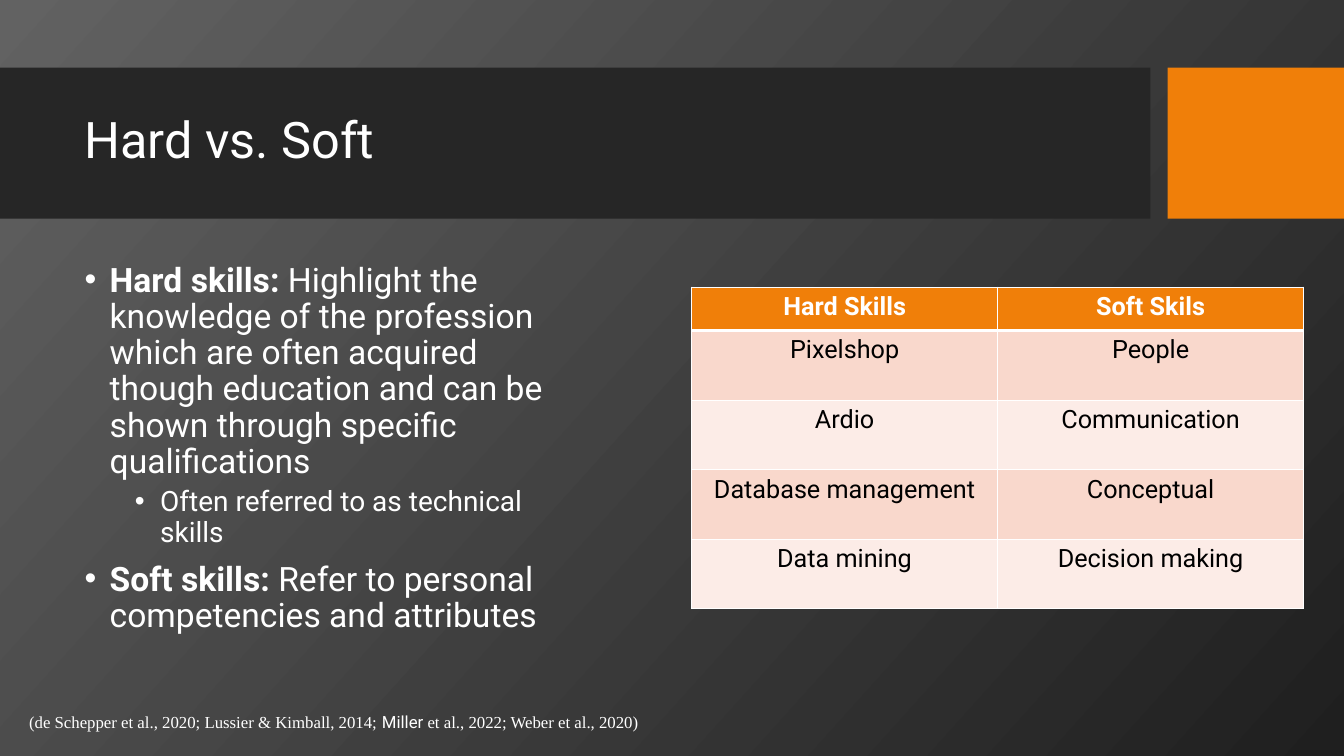
from lxml import etree
from pptx import Presentation
from pptx.dml.color import RGBColor
from pptx.enum import shapes, text
from pptx.oxml.ns import qn
from pptx.util import Inches, Pt

# Content
TITLE = "Hard vs. Soft"
POINTS = [  # level, bold lead, text
    (0, "Hard skills: ", "Highlight the knowledge of the profession which are often "
     "acquired though education and can be shown through specific qualifications"),
    (1, "", "Often referred to as technical skills"),
    (0, "Soft skills: ", "Refer to personal competencies and attributes"),
]
CITES = [
    ("(de Schepper et al., 2020; Lussier & Kimball, 2014; ", "Times New Roman"),
    ("Miller", "Roboto"),
    (" et al., 2022; Weber et al., 2020)", "Times New Roman"),
]
SKILLS = [
    ("Hard Skills", "Soft Skils"),
    ("Pixelshop", "People"),
    ("Ardio", "Communication"),
    ("Database management", "Conceptual"),
    ("Data mining", "Decision making"),
]

# Colours and level formats
WHITE = RGBColor(0xFF, 0xFF, 0xFF)
BLACK = RGBColor(0, 0, 0)
DARK = RGBColor(0x26, 0x26, 0x26)
ORANGE = RGBColor(0xF0, 0x7F, 0x09)
ROSE = RGBColor(0xF9, 0xD8, 0xCC)
PALE = RGBColor(0xFC, 0xEC, 0xE7)
SHADES = [RGBColor(0x62, 0x62, 0x62), RGBColor(0x1F, 0x1F, 0x1F)]
LEVELS = [dict(size=24, left=0.25, before=10), dict(size=20, left=0.75, before=5)]
HANG = 0.25


def add_run(par, words, size, **form):
    run = par.add_run()
    run.text = words
    base = dict(name="Roboto", size=Pt(size), bold=False)
    color = form.pop("color", WHITE)
    for key, val in {**base, **form}.items():
        setattr(run.font, key, val)
    run.font.color.rgb = color


def add_box(x, y, w, h, anchor=text.MSO_ANCHOR.TOP):
    frame = slide.shapes.add_textbox(*map(Inches, (x, y, w, h))).text_frame
    frame.word_wrap = True
    frame.vertical_anchor = anchor
    return frame


def add_bullet(par, left):
    props = par._p.get_or_add_pPr()
    props.set("marL", str(Inches(left)))
    props.set("indent", str(-Inches(HANG)))
    etree.SubElement(props, qn("a:buFont")).set("typeface", "Arial")
    etree.SubElement(props, qn("a:buChar")).set("char", "•")


def add_edges(cell, widths):
    props = cell._tc.get_or_add_tcPr()
    for spot, (side, width) in enumerate(widths.items()):
        line = etree.Element(qn("a:ln" + side), w=str(Pt(width)))
        fill = etree.SubElement(line, qn("a:solidFill"))
        etree.SubElement(fill, qn("a:srgbClr")).set("val", str(WHITE))
        props.insert(spot, line)


prs = Presentation()
prs.slide_width, prs.slide_height = Inches(13.33), Inches(7.5)
slide = prs.slides.add_slide(prs.slide_layouts[6])

# Background
back = slide.background.fill
back.gradient()
back.gradient_angle = 318
for stop, shade in zip(back.gradient_stops, SHADES):
    stop.color.rgb = shade

# Title band
for x, w, color in [(0, 11.41, DARK), (11.58, 1.75, ORANGE)]:
    band = slide.shapes.add_shape(
        shapes.MSO_SHAPE.RECTANGLE, *map(Inches, (x, 0.67, w, 1.5)))
    band.shadow.inherit = False
    band.fill.solid()
    band.fill.fore_color.rgb = color
    band.line.fill.background()
head = add_box(0.74, 0.82, 10.51, 1.18, text.MSO_ANCHOR.MIDDLE).paragraphs[0]
head.line_spacing = 0.9
add_run(head, TITLE, 36)

# Bullet points
body = add_box(0.74, 2.56, 5.13, 3.94)
for i, (level, lead, words) in enumerate(POINTS):
    form = LEVELS[level]
    par = body.add_paragraph() if i else body.paragraphs[0]
    add_bullet(par, form["left"])
    par.level = level
    par.line_spacing = 0.9
    par.space_before = Pt(form["before"] if i else 0)
    if lead:
        add_run(par, lead, form["size"], bold=True)
    add_run(par, words, form["size"])

# Citations
note = add_box(0.19, 7.01, 6.67, 0.3).paragraphs[0]
for words, name in CITES:
    add_run(note, words, 12, name=name)

# Skills table
grid = slide.shapes.add_table(
    len(SKILLS), 2, *map(Inches, (6.86, 2.85, 6.07, 3.2))).table
for r, row in enumerate(SKILLS):
    grid.rows[r].height = Inches(0.69 if r else 0.43)
    for c, words in enumerate(row):
        cell = grid.cell(r, c)
        cell.fill.solid()
        cell.fill.fore_color.rgb = (ROSE if r % 2 else PALE) if r else ORANGE
        add_edges(cell, dict(L=1, R=1, T=3 if r == 1 else 1, B=1 if r else 3))
        par = cell.text_frame.paragraphs[0]
        par.alignment = text.PP_ALIGN.CENTER
        add_run(par, words, 18, bold=r == 0, color=BLACK if r else WHITE)

prs.save("out.pptx")
